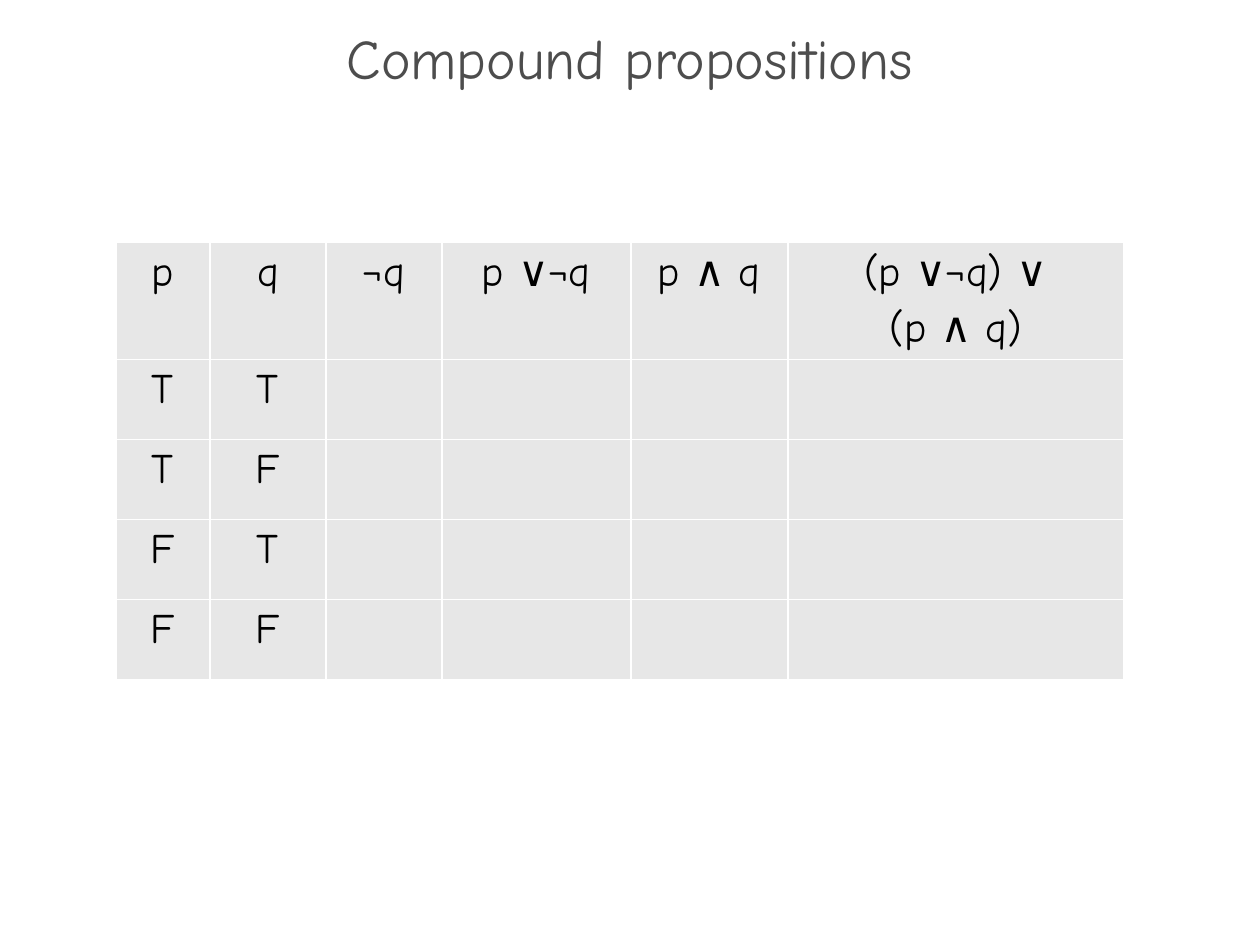
from lxml import etree
from pptx import Presentation
from pptx.dml.color import RGBColor
from pptx.enum.text import MSO_ANCHOR, MSO_AUTO_SIZE, PP_ALIGN
from pptx.oxml.ns import qn
from pptx.util import Emu, Pt

CENTER = PP_ALIGN.CENTER
MIDDLE = MSO_ANCHOR.MIDDLE
NO_AUTOFIT = MSO_AUTO_SIZE.NONE
TITLE_ONLY = 5
FONT = "Comic Neue"
EMU_PER_PX = 914400 // 126

HEADERS = ["p", "q", "¬q", "p ∨¬q", "p ∧ q", "(p ∨¬q) ∨\n(p ∧ q)"]
TRUTH_VALUES = [(p, q) for p in "TF" for q in "TF"]
COLUMN_WIDTHS = [94, 116, 116, 189, 157, 336]
ROW_HEIGHTS = [84] + [80] * len(TRUTH_VALUES)


def px(length):
    return Emu(length * EMU_PER_PX)


def color(value):
    return RGBColor.from_string(value)


def format_paragraph(paragraph, size, text_color):
    paragraph.alignment = CENTER
    paragraph.font.name = FONT
    paragraph.font.size = Pt(size)
    paragraph.font.color.rgb = color(text_color)


def add_title(slide, text, left, top, width, height):
    title = slide.shapes.title
    title.left, title.top, title.width, title.height = map(px, (left, top, width, height))
    frame = title.text_frame
    frame.text = text
    frame.auto_size = NO_AUTOFIT
    frame.vertical_anchor = MIDDLE
    paragraph = frame.paragraphs[0]
    format_paragraph(paragraph, 32, "4D4D4D")
    paragraph.line_spacing = 0.7


def set_borders(cell, line_color):
    properties = cell._tc.get_or_add_tcPr()
    for position, side in enumerate(("a:lnL", "a:lnR", "a:lnT", "a:lnB")):
        line = etree.Element(qn(side), w=str(Pt(1)))
        fill = etree.SubElement(line, qn("a:solidFill"))
        etree.SubElement(fill, qn("a:srgbClr"), val=line_color)
        properties.insert(position, line)


def fill_cell(cell, text):
    cell.fill.solid()
    cell.fill.fore_color.rgb = color("E7E7E7")
    set_borders(cell, "FFFFFF")
    cell.text = text
    for paragraph in cell.text_frame.paragraphs:
        format_paragraph(paragraph, 24, "000000")
        paragraph.space_before = Pt(4.8)


def add_truth_table(slide, left, top):
    rows = [HEADERS] + [[p, q, "", "", "", ""] for p, q in TRUTH_VALUES]
    box = map(px, (left, top, sum(COLUMN_WIDTHS), sum(ROW_HEIGHTS)))
    table = slide.shapes.add_table(len(rows), len(HEADERS), *box).table
    table.first_row = False
    table.horz_banding = False
    for column, width in zip(table.columns, COLUMN_WIDTHS):
        column.width = px(width)
    for row, height, texts in zip(table.rows, ROW_HEIGHTS, rows):
        row.height = px(height)
        for cell, text in zip(row.cells, texts):
            fill_cell(cell, text)


def main():
    presentation = Presentation()
    presentation.slide_width = px(1260)
    presentation.slide_height = px(945)
    slide = presentation.slides.add_slide(presentation.slide_layouts[TITLE_ONLY])
    add_title(slide, "Compound propositions", 0, 34, 1260, 63)
    add_truth_table(slide, 116, 242)
    presentation.save("out.pptx")


if __name__ == "__main__":
    main()
